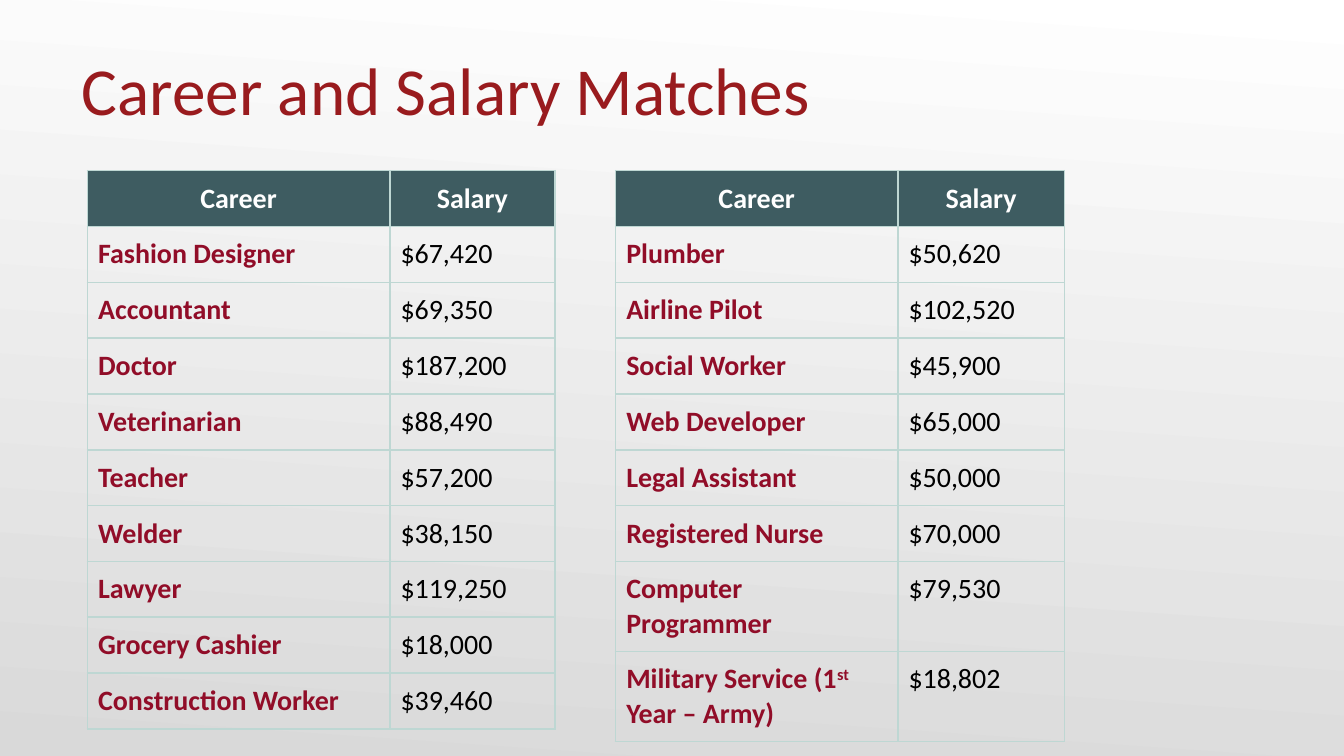
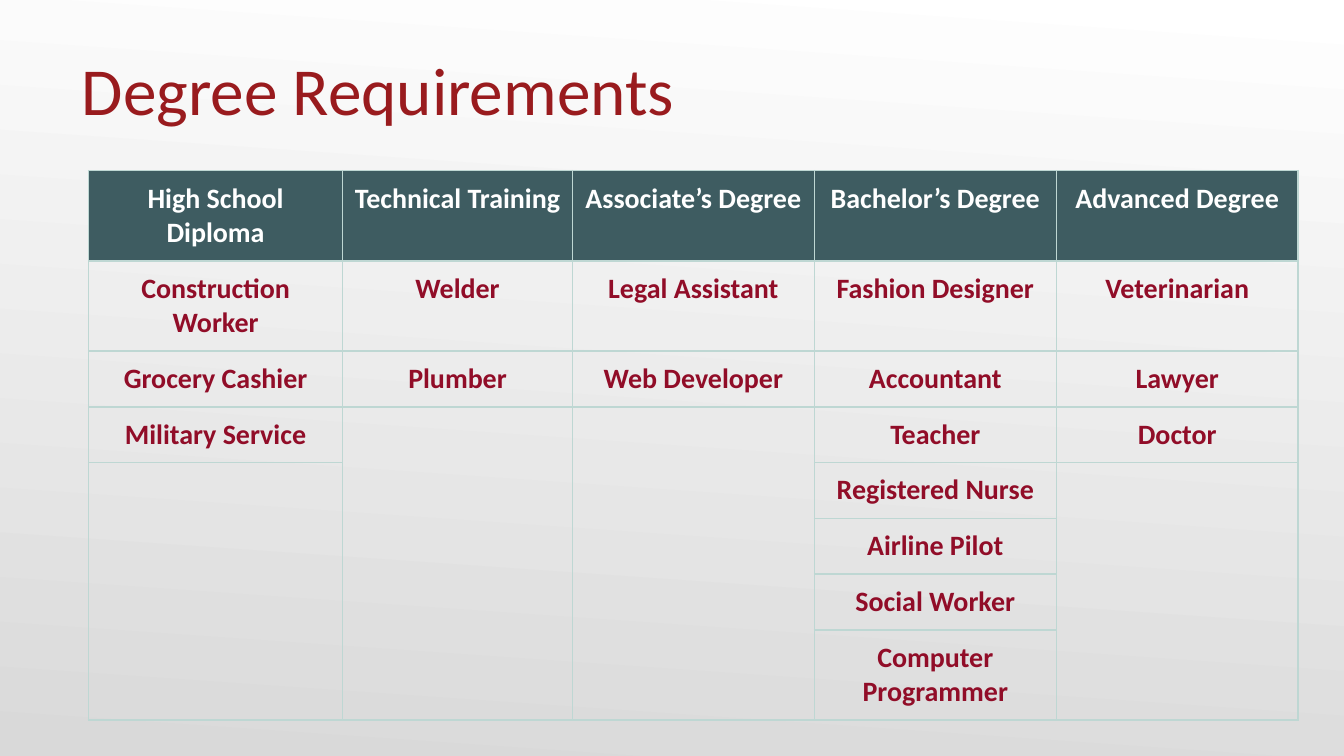
from itertools import zip_longest

from lxml.etree import SubElement
from pptx import Presentation
from pptx.dml.color import RGBColor
from pptx.enum.text import MSO_ANCHOR as Anchor, MSO_AUTO_SIZE as AutoSize, PP_ALIGN as Align
from pptx.oxml.ns import qn
from pptx.util import Inches, Pt

FONT = "Calibri"
TITLE_RED = "991B1E"
CAREER_RED = "910D28"
HEADER_TEAL = "3E5C61"
BORDER_MINT = "BED7D3"
WHITE = "FFFFFF"
GREY = "D9D9D9"
BLACK = "000000"
PLAIN_TABLE_STYLE = "{2D5ABB26-0587-4C30-8999-92F81FD0307C}"
SLIDE_WIDTH = 10
SLIDE_HEIGHT = SLIDE_WIDTH * 9 / 16
TABLE_TOP = 1.27
ROW_HEIGHT = 0.41
CELL_MARGIN = 0.08

SALARIES_LEFT = [
    ("Career", "Salary"),
    ("Fashion Designer", "$67,420"),
    ("Accountant", "$69,350"),
    ("Doctor", "$187,200"),
    ("Veterinarian", "$88,490"),
    ("Teacher", "$57,200"),
    ("Welder", "$38,150"),
    ("Lawyer", "$119,250"),
    ("Grocery Cashier", "$18,000"),
    ("Construction Worker", "$39,460"),
]
SALARIES_RIGHT = [
    ("Career", "Salary"),
    ("Plumber", "$50,620"),
    ("Airline Pilot", "$102,520"),
    ("Social Worker", "$45,900"),
    ("Web Developer", "$65,000"),
    ("Legal Assistant", "$50,000"),
    ("Registered Nurse", "$70,000"),
    ("Computer Programmer", "$79,530"),
    ("Military Service (1^st^ Year – Army)", "$18,802"),
]
DEGREES = {
    "High School Diploma": ["Construction Worker", "Grocery Cashier", "Military Service"],
    "Technical Training": ["Welder", "Plumber"],
    "Associate’s Degree": ["Legal Assistant", "Web Developer"],
    "Bachelor’s Degree": [
        "Fashion Designer", "Accountant", "Teacher", "Registered Nurse",
        "Airline Pilot", "Social Worker", "Computer Programmer",
    ],
    "Advanced Degree": ["Veterinarian", "Lawyer", "Doctor"],
}


def color(hex_string):
    return RGBColor.from_string(hex_string)


def write_text(text_frame, text, size=15, fill=BLACK, bold=False, align=Align.LEFT):
    paragraph = text_frame.paragraphs[0]
    paragraph.alignment = align
    for index, part in enumerate(text.split("^")):
        run = paragraph.add_run()
        run.text = part
        run.font.name = FONT
        run.font.size = Pt(size)
        run.font.bold = bold
        run.font.color.rgb = color(fill)
        if index % 2:
            run.font._element.set("baseline", "30000")


def set_background(master):
    fill = master.background.fill
    fill.gradient()
    fill.gradient_angle = 266
    for stop, shade in zip(fill.gradient_stops, (WHITE, GREY)):
        stop.color.rgb = color(shade)


def add_titled_slide(presentation, title_text):
    slide = presentation.slides.add_slide(presentation.slide_layouts[5])
    title = slide.shapes.title
    title.left, title.top = Inches(0.5), Inches(0.25)
    title.width, title.height = Inches(9), Inches(0.71)
    text_frame = title.text_frame
    text_frame.auto_size = AutoSize.NONE
    text_frame.vertical_anchor = Anchor.BOTTOM
    text_frame.margin_left = Inches(0.11)
    text_frame.margin_top = Inches(0.05)
    text_frame.margin_right = text_frame.margin_bottom = 0
    write_text(text_frame, title_text, size=36, fill=TITLE_RED)
    return slide


def add_borders(cell):
    properties = cell._tc.get_or_add_tcPr()
    for side in ("lnL", "lnR", "lnT", "lnB"):
        line = SubElement(properties, qn(f"a:{side}"), w=str(Pt(1)))
        solid = SubElement(line, qn("a:solidFill"))
        SubElement(solid, qn("a:srgbClr"), val=BORDER_MINT)


def format_cell(cell, text, header, **text_format):
    add_borders(cell)
    if header:
        cell.fill.solid()
        cell.fill.fore_color.rgb = color(HEADER_TEAL)
        text_format = dict(fill=WHITE, bold=True, align=Align.CENTER)
    else:
        cell.fill.background()
    if text:
        cell.margin_left = cell.margin_right = Inches(CELL_MARGIN)
        cell.margin_top = cell.margin_bottom = Inches(CELL_MARGIN)
        write_text(cell.text_frame, text, **text_format)


def add_table(slide, left, widths, rows, column_formats):
    frame = slide.shapes.add_table(
        len(rows), len(widths), Inches(left), Inches(TABLE_TOP),
        Inches(sum(widths)), Inches(ROW_HEIGHT * len(rows)))
    table = frame.table
    table.first_row = table.horz_banding = False
    table._tbl.tblPr.find(qn("a:tableStyleId")).text = PLAIN_TABLE_STYLE
    for column, width in zip(table.columns, widths):
        column.width = Inches(width)
    for row_index, row in enumerate(rows):
        table.rows[row_index].height = Inches(ROW_HEIGHT)
        for column_index, text in enumerate(row):
            format_cell(table.cell(row_index, column_index), text,
                        row_index == 0, **column_formats[column_index])
    return table


def add_salary_slide(presentation):
    slide = add_titled_slide(presentation, "Career and Salary Matches")
    formats = [dict(fill=CAREER_RED, bold=True), {}]
    add_table(slide, 0.65, [2.25, 1.23], SALARIES_LEFT, formats)
    add_table(slide, 4.58, [2.1, 1.24], SALARIES_RIGHT, formats)


def add_degree_slide(presentation):
    slide = add_titled_slide(presentation, "Degree Requirements")
    columns = [[degree, *careers] for degree, careers in DEGREES.items()]
    rows = list(zip_longest(*columns, fillvalue=""))
    formats = [dict(fill=CAREER_RED, bold=True, align=Align.CENTER)] * len(columns)
    table = add_table(slide, 0.66, [1.89, 1.71, 1.8, 1.8, 1.8], rows, formats)
    for index, column in enumerate(columns):
        if len(column) < len(rows):
            table.cell(len(column), index).merge(table.cell(len(rows) - 1, index))


def main():
    presentation = Presentation()
    presentation.slide_width = Inches(SLIDE_WIDTH)
    presentation.slide_height = Inches(SLIDE_HEIGHT)
    set_background(presentation.slide_master)
    add_salary_slide(presentation)
    add_degree_slide(presentation)
    presentation.save("out.pptx")


if __name__ == "__main__":
    main()
